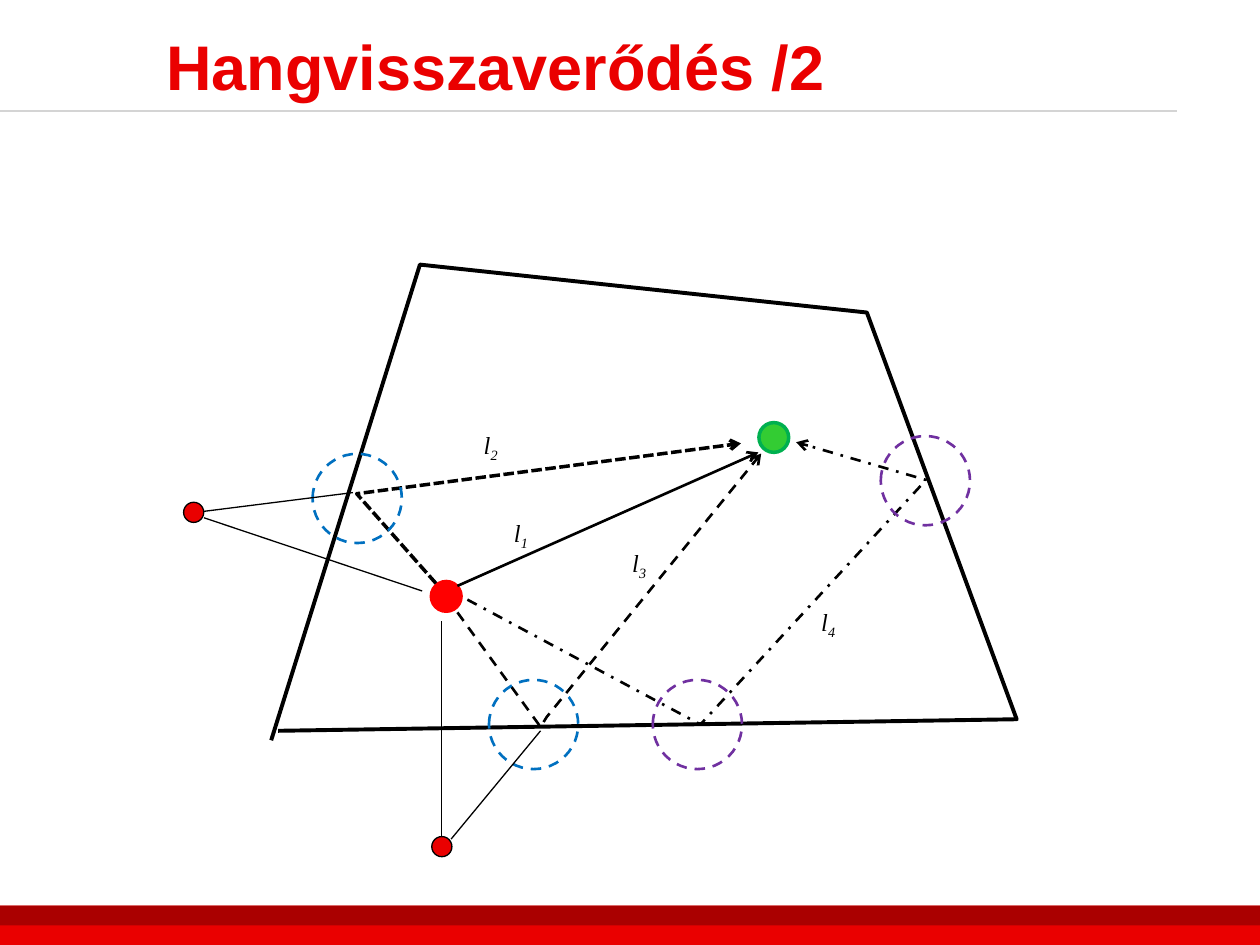
from lxml import etree
from pptx import Presentation
from pptx.dml.color import RGBColor
from pptx.enum.dml import MSO_LINE as DASH
from pptx.enum.shapes import MSO_CONNECTOR, MSO_SHAPE as SHAPE
from pptx.enum.text import MSO_ANCHOR as ANCHOR
from pptx.oxml.ns import qn
from pptx.util import Pt

BLACK, RED, DARK_RED = "000000", "EA0000", "AA0000"
BLUE, PURPLE = "0070C0", "7030A0"


def color(value):
    return RGBColor.from_string(value)


def style_line(s, value, width, dash=None, arrow=False):
    s.line.color.rgb = color(value)
    s.line.width = Pt(width)
    if dash:
        s.line.dash_style = dash
    if arrow:
        etree.SubElement(s.line._get_or_add_ln(), qn("a:tailEnd"), type="arrow")


def add_shape(slide, kind, x, y, w, h, fill=None, line=None, width=1, dash=None):
    s = slide.shapes.add_shape(kind, Pt(x), Pt(y), Pt(w), Pt(h))
    s.shadow.inherit = False
    if fill:
        s.fill.solid()
        s.fill.fore_color.rgb = color(fill)
    else:
        s.fill.background()
    if line:
        style_line(s, line, width, dash)
    else:
        s.line.fill.background()


def add_circle(slide, cx, cy, d, **fmt):
    add_shape(slide, SHAPE.OVAL, cx - d / 2, cy - d / 2, d, d, **fmt)


def add_line(slide, start, end, value=BLACK, width=0.75, arrow=False):
    ends = [Pt(v) for v in (*start, *end)]
    s = slide.shapes.add_connector(MSO_CONNECTOR.STRAIGHT, *ends)
    style_line(s, value, width, arrow=arrow)
    etree.SubElement(s._element.spPr, qn("a:effectLst"))


def add_path(slide, points, width, dash=None, arrow=False):
    first, *rest = [(Pt(x), Pt(y)) for x, y in points]
    builder = slide.shapes.build_freeform(*first, scale=1.0)
    builder.add_line_segments(rest, close=False)
    s = builder.convert_to_shape()
    s.shadow.inherit = False
    s.fill.background()
    style_line(s, BLACK, width, dash, arrow)


def add_text(slide, x, y, w, h, text, sub="", size=14, font="Times New Roman",
             value=BLACK, bold=False, italic=False, anchor=ANCHOR.TOP):
    tf = slide.shapes.add_textbox(Pt(x), Pt(y), Pt(w), Pt(h)).text_frame
    tf.word_wrap = True
    tf.vertical_anchor = anchor
    p = tf.paragraphs[0]
    for part in filter(None, (text, sub)):
        r = p.add_run()
        r.text = part
        r.font.size, r.font.name = Pt(size), font
        r.font.bold, r.font.italic = bold, italic
        r.font.color.rgb = color(value)
    if sub:
        r.font._element.set("baseline", "-25000")


def add_header(slide, x, y, w, h):
    add_line(slide, (x, y + h), (x + w, y + h), "D4D4D4", 1.5)
    add_text(slide, x + 88, y + 6, 629, 62.5, "Hangvisszaverődés /2", size=36,
             font="Arial", value=RED, bold=True, anchor=ANCHOR.MIDDLE)


def add_footer(slide, x, y, w, h):
    add_shape(slide, SHAPE.RECTANGLE, x, y, w, h, fill=RED)
    add_shape(slide, SHAPE.RECTANGLE, x, y, w, h / 2, fill=DARK_RED)


def add_room(slide, x, y):
    def at(*points):
        return [(x + px, y + py) for px, py in points]

    walls = at((55, 273), (140, 1.2), (395.4, 28.6), (481, 261), (59, 267.6))
    add_path(slide, walls, 2.25)

    add_circle(slide, x + 155, y + 190.8, 17, fill="FF0000", line="FF0000", width=2)
    add_circle(slide, x + 342.2, y + 100, 17, fill="33CC33", line="00B050", width=2)

    paths = [
        (1.5, DASH.DASH, ((161.4, 200), (208.9, 265.4), (212.5, 259.7), (335, 109.2))),
        (2, DASH.SQUARE_DOT, ((149.1, 183.4), (103.8, 132.2), (323.4, 103.4))),
        (1.5, DASH.DASH_DOT, ((167.1, 192.7), (300.3, 264), (429.2, 124.3), (355, 102.7))),
    ]
    for width, dash, points in paths:
        add_path(slide, at(*points), width, dash, arrow=True)
    add_line(slide, *at((161.4, 184.8), (333.4, 108.5)), width=1.5, arrow=True)

    reflections = [(104.1, 134.8, BLUE), (428.8, 124.7, PURPLE),
                   (298.5, 264, PURPLE), (204.9, 264, BLUE)]
    for cx, cy, value in reflections:
        add_circle(slide, x + cx, y + cy, 51, line=value, width=1.5, dash=DASH.DASH)

    rays = [((101.6, 131.5), (15.9, 142.3)), ((16.6, 145.9), (141.2, 187.7)),
            ((208.9, 267.6), (157.8, 329.5)), ((152.2, 205), (152.2, 329.5))]
    for ray in rays:
        add_line(slide, *at(*ray))
    for cx, cy in at((10.7, 142.8), (152.5, 333.8)):
        add_circle(slide, cx, cy, 11.5, fill=RED, line=BLACK, width=0.75)

    labels = at((186.6, 142.3), (169.3, 92), (254.2, 159.6), (362.2, 193.4))
    for number, (left, top) in enumerate(labels, 1):
        add_text(slide, left, top, 39.6, 24, "l", sub=str(number), italic=True)


def main():
    prs = Presentation()
    prs.slide_width, prs.slide_height = Pt(720), Pt(540)
    slide = prs.slides.add_slide(prs.slide_layouts[6])
    add_footer(slide, 0, 517.5, 720, 22.5)
    add_header(slide, 0, 0, 672.5, 63.4)
    add_room(slide, 100, 150)
    prs.save("out.pptx")


if __name__ == "__main__":
    main()
